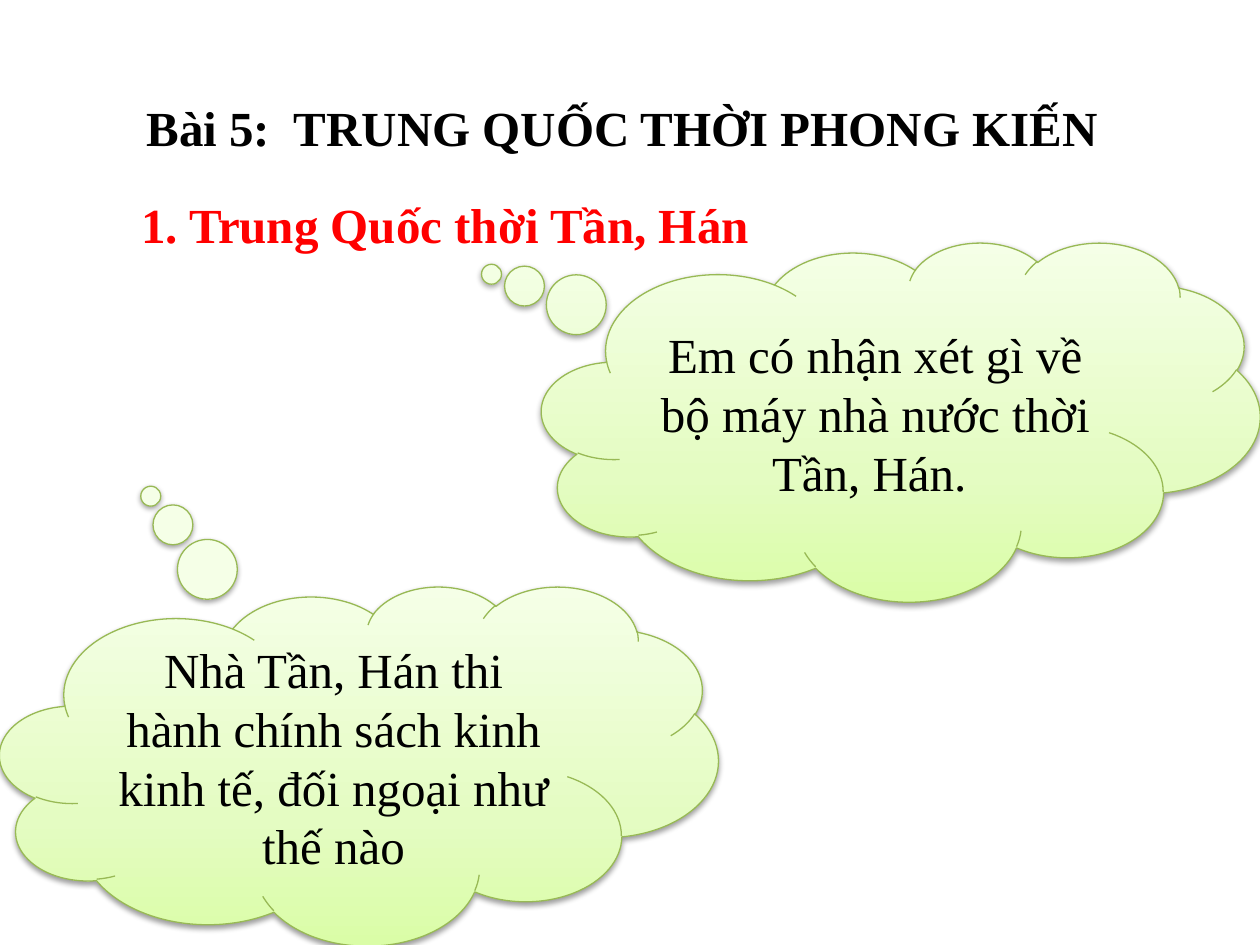
from copy import deepcopy
from dataclasses import dataclass

from lxml import etree
from pptx import Presentation
from pptx.dml.color import RGBColor
from pptx.enum.shapes import MSO_SHAPE
from pptx.enum.text import MSO_ANCHOR, MSO_AUTO_SIZE, PP_ALIGN
from pptx.oxml.ns import qn
from pptx.util import Pt

CLOUD = MSO_SHAPE.CLOUD_CALLOUT
TOP, MIDDLE = MSO_ANCHOR.TOP, MSO_ANCHOR.MIDDLE
LEFT, CENTER = PP_ALIGN.LEFT, PP_ALIGN.CENTER
FIXED = MSO_AUTO_SIZE.NONE
TITLE_ONLY = 5


@dataclass(frozen=True)
class Theme:
    font: str = "Times New Roman"
    size: float = 28
    ink: str = "000000"
    accent: str = "FF0000"
    cloud_line: str = "98B955"
    cloud_stops: tuple = ((0, "DAFDA7"), (0.35, "E4FCC2"), (1, "F5FFE7"))
    shadow: str = "000000"


THEME = Theme()


def write(shape, text, color, bold, align, anchor):
    frame = shape.text_frame
    frame_format = {"word_wrap": True, "auto_size": FIXED, "vertical_anchor": anchor}
    for key, value in frame_format.items():
        setattr(frame, key, value)
    paragraph = frame.paragraphs[0]
    paragraph.alignment = align
    run = paragraph.add_run()
    run.text = text
    font_format = {"name": THEME.font, "size": Pt(THEME.size), "bold": bold}
    for key, value in font_format.items():
        setattr(run.font, key, value)
    run.font.color.rgb = RGBColor.from_string(color)


def place_lesson_title(slide, box, text):
    lesson = slide.shapes.title
    for key, value in zip(("left", "top", "width", "height"), box):
        setattr(lesson, key, Pt(value))
    write(lesson, text, THEME.ink, True, CENTER, MIDDLE)


def place_section_heading(slide, box, text):
    section = slide.shapes.add_textbox(*map(Pt, box))
    write(section, text, THEME.accent, True, LEFT, TOP)


def fill_cloud(cloud):
    cloud.fill.gradient()
    cloud.fill.gradient_angle = 90
    stops = cloud.fill.gradient_stops
    stop_list = cloud.element.spPr.find(qn("a:gradFill")).find(qn("a:gsLst"))
    stop_list.insert(1, deepcopy(stop_list[0]))
    for stop, (position, color) in zip(stops, THEME.cloud_stops):
        stop.position = position
        stop.color.rgb = RGBColor.from_string(color)


def cast_shadow(cloud):
    cloud.shadow.inherit = False
    effects = cloud.element.spPr.find(qn("a:effectLst"))
    shadow = etree.SubElement(
        effects, qn("a:outerShdw"),
        blurRad=str(Pt(3.1)), dist=str(Pt(1.6)), dir="5400000", rotWithShape="0",
    )
    color = etree.SubElement(shadow, qn("a:srgbClr"), val=THEME.shadow)
    etree.SubElement(color, qn("a:alpha"), val="38000")


def place_question(slide, box, tail, text):
    cloud = slide.shapes.add_shape(CLOUD, *map(Pt, box))
    for index, offset in enumerate(tail):
        cloud.adjustments[index] = offset
    fill_cloud(cloud)
    cloud.line.color.rgb = RGBColor.from_string(THEME.cloud_line)
    cloud.line.width = Pt(0.75)
    cast_shadow(cloud)
    write(cloud, text, THEME.ink, False, CENTER, MIDDLE)


def main():
    deck = Presentation()
    deck.slide_width, deck.slide_height = Pt(720), Pt(540)
    slide = deck.slides.add_slide(deck.slide_layouts[TITLE_ONLY])

    place_lesson_title(slide, (31.5, 52, 648, 41), "Bài 5:  TRUNG QUỐC THỜI PHONG KIẾN")
    place_section_heading(slide, (73.5, 107.5, 564, 41), "1. Trung Quốc thời Tần, Hán")

    cloud_width, cloud_height = 410.4, 205.2
    questions = (
        (0, 334.8, (-0.29, -0.75),
         "Nhà Tần, Hán thi hành chính sách kinh kinh tế, đối ngoại như thế nào"),
        (309.6, 138.24, (-0.57, -0.41),
         "Em có nhận xét gì về bộ máy nhà nước thời Tần, Hán. "),
    )
    for left, top, tail, text in questions:
        place_question(slide, (left, top, cloud_width, cloud_height), tail, text)

    deck.save("out.pptx")


if __name__ == "__main__":
    main()
